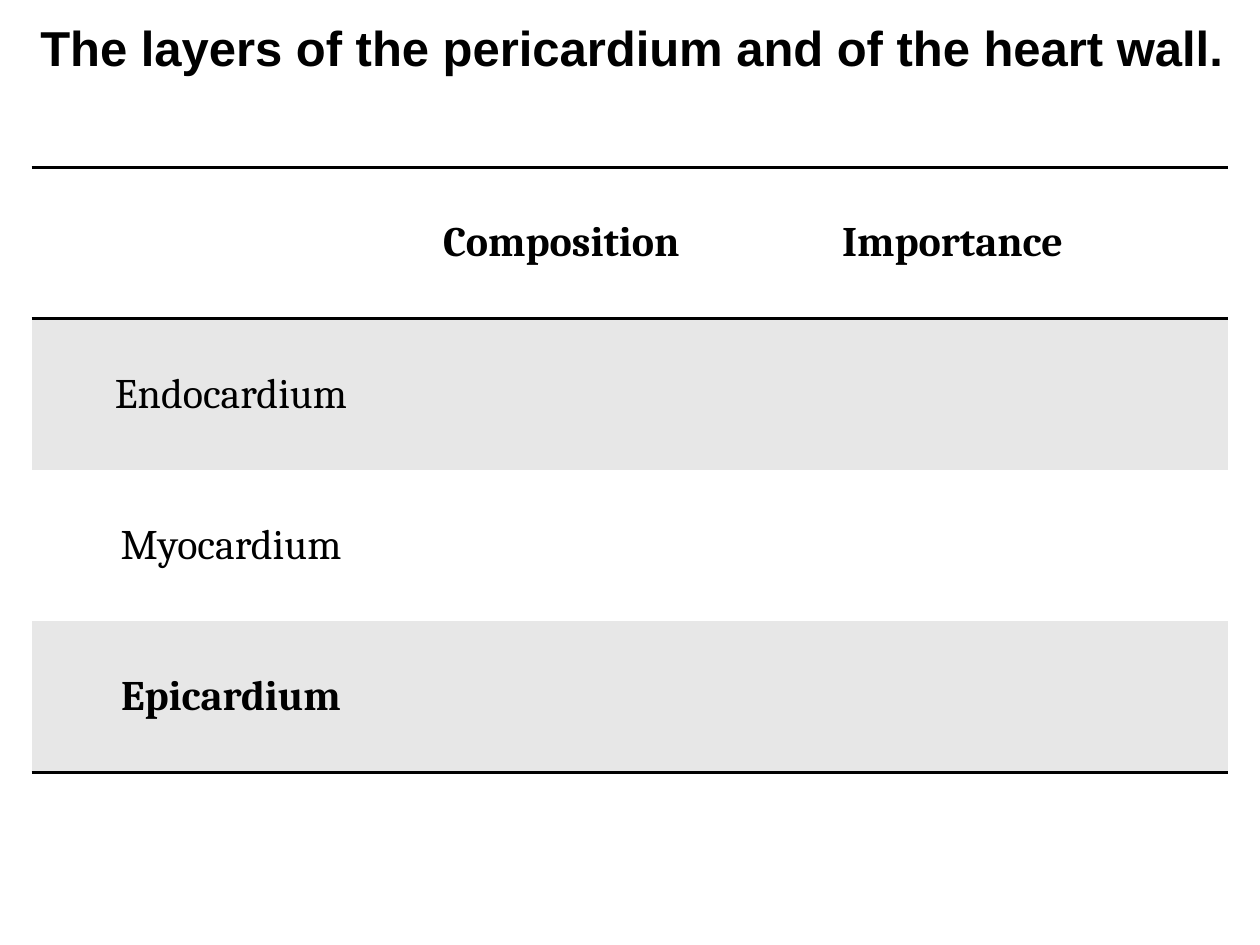
from lxml.etree import SubElement
from pptx import Presentation
from pptx.dml.color import RGBColor
from pptx.enum.text import MSO_ANCHOR, PP_ALIGN
from pptx.oxml.ns import qn
from pptx.util import Inches, Pt

BLACK, WHITE, GREY = "000000", "FFFFFF", "E7E7E7"
NO_STYLE_NO_GRID = "{2D5ABB26-0587-4C30-8999-92F81FD0307C}"
ROWS = [
    ["", "Composition", "Importance"],
    ["Endocardium", "", ""],
    ["Myocardium", "", ""],
    ["Epicardium", "", ""],
]
BOLD_ROWS = (0, 3)
RULES = {0: ("a:lnT", "a:lnB"), 3: ("a:lnB",)}


def set_fill(target, color):
    """Fill a shape or cell with a solid colour."""
    target.fill.solid()
    target.fill.fore_color.rgb = RGBColor.from_string(color)


def add_run(paragraph, text, font, size, bold):
    """Add one black run of text to a paragraph."""
    run = paragraph.add_run()
    run.text = text
    run.font.name = font
    run.font.size = Pt(size)
    run.font.bold = bold
    run.font.color.rgb = RGBColor.from_string(BLACK)


def add_rule(cell, side):
    """Draw a black two-point border on one side of a cell."""
    line = SubElement(cell._tc.get_or_add_tcPr(), qn(side), w=str(Pt(2)))
    fill = SubElement(line, qn("a:solidFill"))
    SubElement(fill, qn("a:srgbClr"), val=BLACK)


def add_title(slide, text):
    """Place the heading in the title placeholder."""
    title = slide.shapes.title
    title.left, title.top = Inches(0), Inches(0)
    title.width, title.height = Inches(10), Inches(0.64)
    set_fill(title, WHITE)
    frame = title.text_frame
    frame.word_wrap = True
    frame.vertical_anchor = MSO_ANCHOR.TOP
    frame.margin_left, frame.margin_right = Inches(0.32), Inches(0.1)
    frame.margin_top, frame.margin_bottom = Inches(0.14), Inches(0.05)
    paragraph = frame.paragraphs[0]
    paragraph.alignment = PP_ALIGN.LEFT
    paragraph.space_before = Pt(0)
    add_run(paragraph, text, "Arial", 28, True)


def fill_cell(cell, text, row, column):
    """Format one table cell and write its text."""
    for side in RULES.get(row, ()):
        add_rule(cell, side)
    set_fill(cell, GREY if row % 2 else WHITE)
    cell.vertical_anchor = MSO_ANCHOR.MIDDLE
    if text:
        paragraph = cell.text_frame.paragraphs[0]
        paragraph.alignment = PP_ALIGN.LEFT if column else PP_ALIGN.CENTER
        add_run(paragraph, text, "Cambria", 24, row in BOLD_ROWS)


def add_layer_table(slide):
    """Add the table of heart wall layers."""
    frame = slide.shapes.add_table(
        len(ROWS), len(ROWS[0]), Inches(0.25), Inches(1.33), Inches(9.5), Inches(4.8)
    )
    table = frame.table
    table.first_row = table.horz_banding = False
    table._tbl.tblPr.find(qn("a:tableStyleId")).text = NO_STYLE_NO_GRID
    for row, texts in enumerate(ROWS):
        for column, text in enumerate(texts):
            fill_cell(table.cell(row, column), text, row, column)


def main():
    """Build and save the presentation."""
    presentation = Presentation()
    presentation.slide_width, presentation.slide_height = Inches(10), Inches(7.5)
    slide = presentation.slides.add_slide(presentation.slide_layouts[5])
    add_layer_table(slide)
    add_title(slide, "The layers of the pericardium and of the heart wall.")
    presentation.save("out.pptx")


if __name__ == "__main__":
    main()
